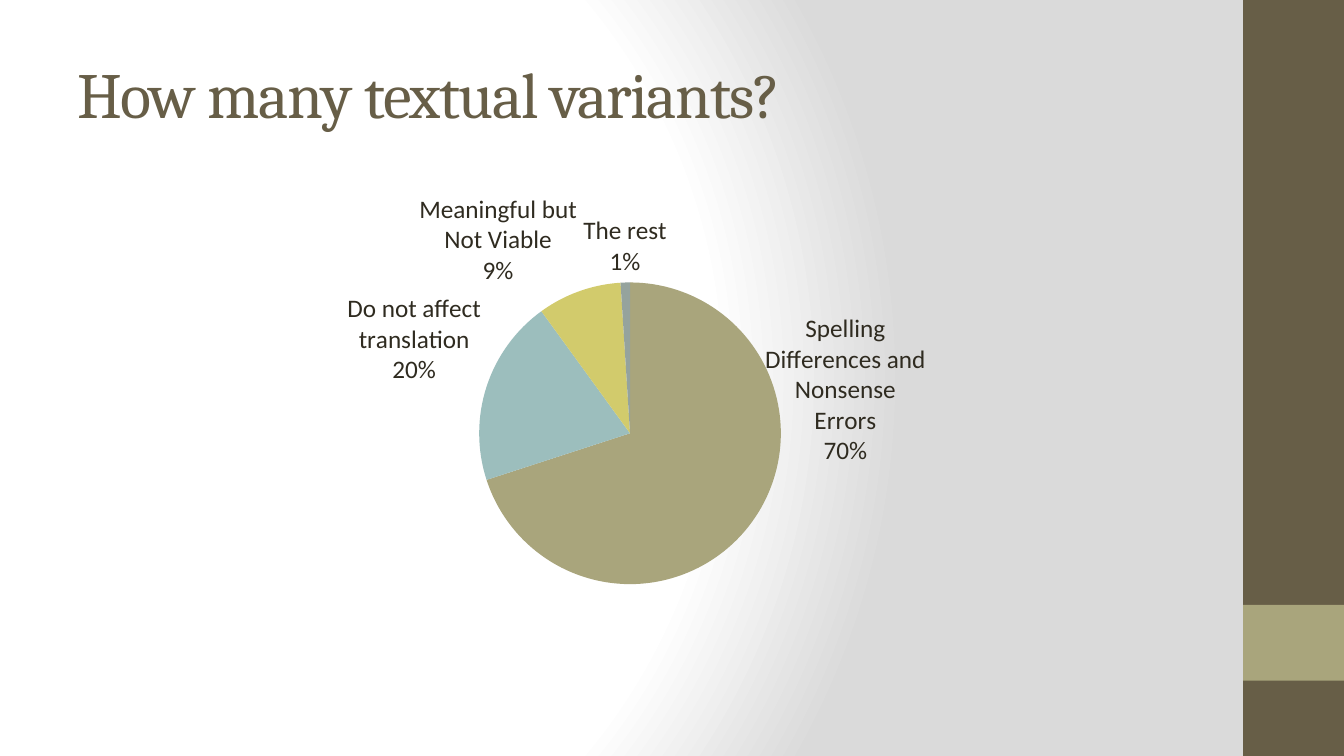
from lxml import etree
from pptx import Presentation
from pptx.chart.data import CategoryChartData
from pptx.dml.color import RGBColor
from pptx.enum.chart import XL_CHART_TYPE, XL_LABEL_POSITION
from pptx.enum.shapes import MSO_SHAPE
from pptx.enum.text import MSO_ANCHOR
from pptx.oxml import parse_xml
from pptx.oxml.ns import nsdecls, qn
from pptx.util import Cm, Pt

PIE = XL_CHART_TYPE.PIE
OUTSIDE = XL_LABEL_POSITION.OUTSIDE_END
RECTANGLE = MSO_SHAPE.RECTANGLE
MIDDLE = MSO_ANCHOR.MIDDLE

TITLE = "How many textual variants?"
VARIANTS = [
    ("Spelling Differences and Nonsense Errors", 70, "A9A57C"),
    ("Do not affect translation", 20, "9CBEBD"),
    ("Meaningful but Not Viable", 9, "D2CB6C"),
    ("The rest", 1, "95A39D"),
]
SIDE_BARS = [(0, 19.05, "675E47"), (15.24, 1.91, "A9A57C")]
BACKGROUND_STOPS = [(0, "FFFFFF"), (75, "FFFFFF"), (100, "DADADA")]
PAGE_WIDTH, PAGE_HEIGHT, BAR_WIDTH = 33.87, 19.05, 2.54
PIE_AREA = {"x": 0.31, "y": 0.2, "w": 0.36, "h": 0.57}
SPELLING_SHIFT = {"x": 0.01, "y": -0.4}


def paint(color, value):
    color.rgb = RGBColor.from_string(value)


def add_background(page):
    stops = "".join(
        f'<a:gs pos="{place * 1000}"><a:srgbClr val="{value}"/></a:gs>'
        for place, value in BACKGROUND_STOPS
    )
    background = parse_xml(
        f'<p:bg {nsdecls("p", "a")}><p:bgPr><a:gradFill rotWithShape="1">'
        f'<a:gsLst>{stops}</a:gsLst><a:path path="circle">'
        '<a:fillToRect l="20000" t="50000" r="100000" b="50000"/>'
        '</a:path></a:gradFill><a:effectLst/></p:bgPr></p:bg>'
    )
    page.element.cSld.insert(0, background)


def add_bar(page, top, height, value):
    bar = page.shapes.add_shape(
        RECTANGLE, Cm(PAGE_WIDTH - BAR_WIDTH), Cm(top), Cm(BAR_WIDTH), Cm(height)
    )
    bar.shadow.inherit = False
    bar.fill.solid()
    paint(bar.fill.fore_color, value)
    bar.line.fill.background()


def add_title(page):
    box = page.shapes.add_textbox(Cm(1.7), Cm(0.76), Cm(28.22), Cm(3.18))
    box.text_frame.word_wrap = True
    box.text_frame.vertical_anchor = MIDDLE
    span = box.text_frame.paragraphs[0].add_run()
    span.text = TITLE
    span.font.name = "Cambria"
    span.font.size = Pt(46)
    paint(span.font.color, "675E47")
    span.font._element.set("spc", "-100")


def make_layout(places, inner=False):
    layout = etree.Element(qn("c:layout"))
    manual = etree.SubElement(layout, qn("c:manualLayout"))
    settings = {}
    if inner:
        settings = {"layoutTarget": "inner", "xMode": "edge", "yMode": "edge"}
    for name, value in {**settings, **places}.items():
        etree.SubElement(manual, qn(f"c:{name}")).set("val", str(value))
    return layout


def show_name_and_percent(labels):
    for name, shown in (("showVal", "0"), ("showCatName", "1"), ("showPercent", "1")):
        labels.find(qn(f"c:{name}")).set("val", shown)
    last = labels.find(qn("c:showBubbleSize"))
    if last is None:
        last = labels.find(qn("c:showPercent"))
    separator = etree.Element(qn("c:separator"))
    separator.text = "\n"
    last.addnext(separator)


def add_pie(page):
    data = CategoryChartData()
    data.categories = [name for name, share, value in VARIANTS]
    data.add_series("Series 1", [share for name, share, value in VARIANTS])
    chart = page.shapes.add_chart(
        PIE, Cm(5.51), Cm(4.45), Cm(21.16), Cm(13.34), data
    ).chart
    chart.has_legend = False
    chart.has_title = False
    chart.font.name = "Calibri"
    chart.font.size = Pt(18)
    paint(chart.font.color, "2F2B20")
    plot = chart.plots[0]
    plot.vary_by_categories = True
    series = plot.series[0]
    for index, (name, share, value) in enumerate(VARIANTS):
        fill = series.points[index].format.fill
        fill.solid()
        paint(fill.fore_color, value)

    labels = series.data_labels
    labels.show_percentage = True
    labels.show_category_name = True
    labels.position = OUTSIDE
    series.points[0].data_label.position = OUTSIDE
    group = series._element.find(qn("c:dLbls"))
    spelling = group.find(qn("c:dLbl"))
    show_name_and_percent(group)
    show_name_and_percent(spelling)
    spelling.find(qn("c:idx")).addnext(make_layout(SPELLING_SHIFT))

    area = chart._chartSpace.chart.plotArea
    for layout in area.findall(qn("c:layout")):
        area.remove(layout)
    area.insert(0, make_layout(PIE_AREA, inner=True))


def main():
    deck = Presentation()
    deck.slide_width, deck.slide_height = Cm(PAGE_WIDTH), Cm(PAGE_HEIGHT)
    page = deck.slides.add_slide(deck.slide_layouts[6])
    add_background(page)
    for top, height, value in SIDE_BARS:
        add_bar(page, top, height, value)
    add_title(page)
    add_pie(page)
    deck.save("out.pptx")


if __name__ == "__main__":
    main()
